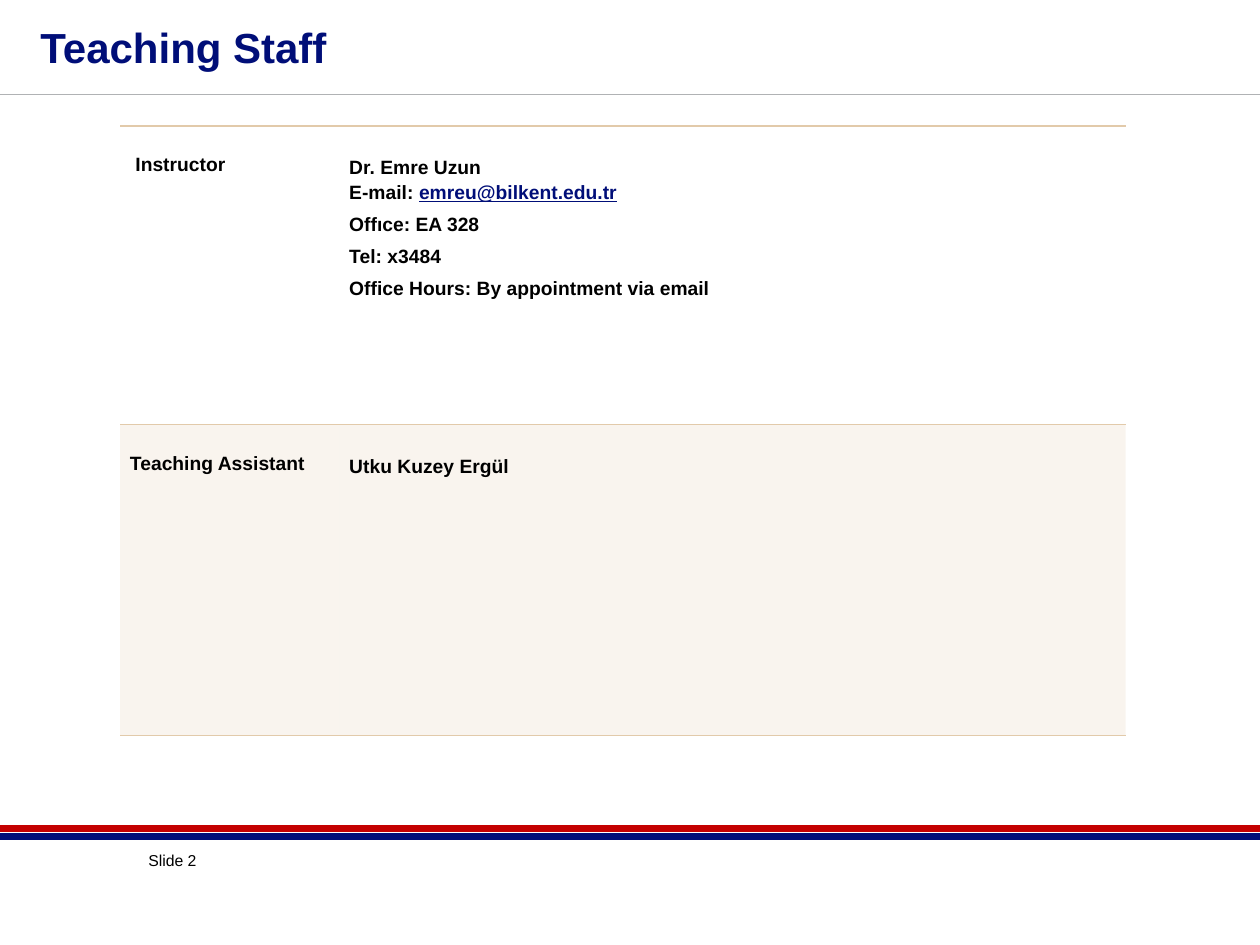
from lxml import etree
from pptx import Presentation
from pptx.dml.color import RGBColor
from pptx.enum.shapes import MSO_CONNECTOR
from pptx.enum.text import MSO_ANCHOR, PP_ALIGN
from pptx.oxml import parse_xml
from pptx.oxml.ns import nsdecls, qn
from pptx.util import Cm, Pt

NAVY, RED, GREY, SAND, BLACK = "000E78", "C40000", "B0B2B4", "E2CAAA", "000000"


def color(hex_text):
    return RGBColor.from_string(hex_text)


def set_font(font, size, hex_text, bold=False):
    font.name, font.size, font.bold = "Arial", Pt(size), bold
    font.color.rgb = color(hex_text)


presentation = Presentation()
presentation.slide_width, presentation.slide_height = Cm(25.4), Cm(19.05)
slide = presentation.slides.add_slide(presentation.slide_layouts[5])

# Header rule and the two footer bands
for y, line_color, width in [(1.9, GREY, 0.75), (16.71, RED, 4), (16.87, NAVY, 4)]:
    rule = slide.shapes.add_connector(
        MSO_CONNECTOR.STRAIGHT, 0, Cm(y), presentation.slide_width, Cm(y))
    rule.line.color.rgb = color(line_color)
    rule.line.width = Pt(width)
    etree.SubElement(rule._element.spPr, qn("a:effectLst"))

# Slide number
footer = slide.shapes.add_textbox(Cm(2.74), Cm(17.02), Cm(2.74), Cm(0.64))
footer.text_frame.word_wrap = True
paragraph = footer.text_frame.paragraphs[0]
paragraph.text = "Slide 2"
set_font(paragraph.font, 9, BLACK)

# Title
title = slide.shapes.title
title.left, title.top, title.width, title.height = Cm(0.56), Cm(-0.64), Cm(19.76), Cm(3.18)
title.text_frame.vertical_anchor = MSO_ANCHOR.MIDDLE
paragraph = title.text_frame.paragraphs[0]
paragraph.text = "Teaching Staff"
paragraph.alignment = PP_ALIGN.LEFT
set_font(paragraph.font, 24, NAVY, bold=True)

# Staff table: each cell lists its paragraphs as (text, email, line spacing)
staff = [
    ([("Instructor", "", 1.15)],
     [("Dr. Emre Uzun", "", 1.15),
      ("E-mail: ", "emreu@bilkent.edu.tr", 1.15),
      ("Offıce: EA 328", "", 1.5),
      ("Tel: x3484", "", 1.5),
      ("Office Hours: By appointment via email", "", 1.5)]),
    ([("Teaching Assistant", "", 1.15)],
     [("Utku Kuzey Ergül", "", 1.15)]),
]
table = slide.shapes.add_table(2, 2, Cm(2.42), Cm(2.54), Cm(20.27), Cm(12.29)).table
table.first_row = table.horz_banding = False
for column, width in zip(table.columns, (4.42, 15.85)):
    column.width = Cm(width)
for row, height in zip(table.rows, (6.02, 6.27)):
    row.height = Cm(height)

for row_index, row_cells in enumerate(staff):
    for column_index, lines in enumerate(row_cells):
        cell = table.cell(row_index, column_index)
        cell.margin_left = cell.margin_right = Cm(0.2)
        cell.margin_top, cell.margin_bottom = Cm((0.51, 0.57)[column_index]), 0
        cell.vertical_anchor = MSO_ANCHOR.TOP

        # Borders above and below only
        properties = cell._tc.get_or_add_tcPr()
        for side in "LRTB":
            paint = "<a:noFill/>" if side in "LR" else (
                f'<a:solidFill><a:srgbClr val="{SAND}"/></a:solidFill>')
            properties.append(parse_xml(
                f'<a:ln{side} {nsdecls("a")} w="{Pt(1)}">{paint}</a:ln{side}>'))

        # Tint on the second row
        if row_index == 0:
            cell.fill.background()
        else:
            cell.fill.solid()
            cell.fill.fore_color.rgb = color(SAND)
            tint = properties.find(qn("a:solidFill")).find(qn("a:srgbClr"))
            etree.SubElement(tint, qn("a:alpha"), val="20000")

        for index, (text, email, spacing) in enumerate(lines):
            frame = cell.text_frame
            paragraph = frame.add_paragraph() if index else frame.paragraphs[0]
            paragraph.line_spacing = spacing
            set_font(paragraph.font, 11, BLACK, bold=True)
            paragraph.add_run().text = text
            if email:
                run = paragraph.add_run()
                run.text = email
                run.font.color.rgb = color(NAVY)
                run.font.underline = True

# The first label sits slightly further in
table.cell(0, 0).margin_left = Cm(0.31)

presentation.save("out.pptx")
